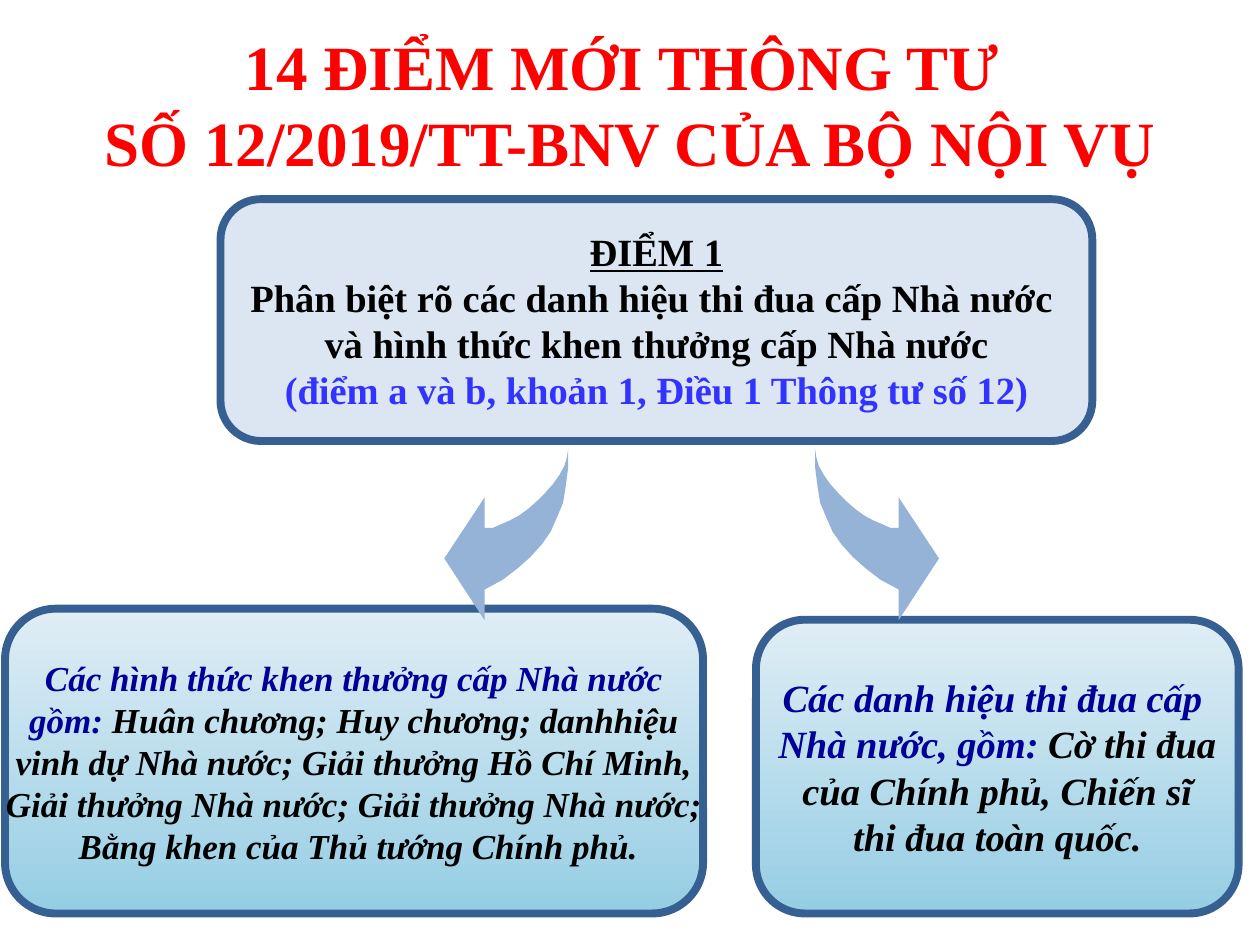
from pptx import Presentation
from pptx.dml.color import RGBColor
from pptx.enum.shapes import MSO_SHAPE
from pptx.enum.text import MSO_ANCHOR, MSO_AUTO_SIZE, PP_ALIGN
from pptx.util import Pt

THEME = {
    "font": "Times New Roman",
    "red": "FF0000", "black": "000000", "blue": "3333FF", "navy": "000099",
    "pale": "DCE6F2", "edge": "376092", "arrow": "95B3D7",
    "fade": ("95CDE4", "E0EEF5"),
    "head": 36, "body": 22, "small": 20, "line": 4.5,
}

TITLE = [[("14 ĐIỂM MỚI THÔNG TƯ \nSỐ 12/2019/TT-BNV CỦA BỘ NỘI VỤ", "red", "b")]]

BOXES = [
    {"at": (126, 113.8, 498.2, 138.2), "size": "body", "fill": "pale", "text": [
        [("ĐIỂM 1", "black", "bu")],
        [("Phân biệt rõ các danh hiệu thi đua cấp Nhà nước \n"
          "và hình thức khen thưởng cấp Nhà nước\n", "black", "b"),
         (" (điểm a và b, khoản 1, Điều 1 Thông tư số 12) ", "blue", "b")],
    ]},
    {"at": (2.9, 347.8, 398.9, 174.2), "size": "small", "fill": "fade", "text": [
        [("Các hình thức khen thưởng cấp Nhà nước", "navy", "bi")],
        [("gồm: ", "navy", "bi"),
         ("Huân chương; Huy chương; danhhiệu\n"
          " vinh dự Nhà nước; Giải thưởng Hồ Chí Minh, ", "black", "bi")],
        [("Giải thưởng Nhà nước; Giải thưởng Nhà nước;\n"
          " Bằng khen của Thủ tướng Chính phủ.", "black", "bi")],
    ]},
    {"at": (432, 354.2, 275.8, 167.8), "size": "body", "fill": "fade", "text": [
        [("Các danh hiệu thi đua cấp \nNhà nước, gồm: ", "navy", "bi"),
         ("Cờ thi đua\n của Chính phủ, Chiến sĩ \nthi đua toàn quốc.", "black", "bi")],
    ]},
]

ARROWS = [(465.8, 1), (324.7, -1)]
TOP = 256.3
CURVE = [
    (0, 0), (0, 10.8), (1.4, 21.6), (2.9, 31), (6.5, 39.6), (10, 47.5),
    (15, 54.7), (21.6, 62), (28.8, 68.4), (37.4, 75), (47.8, 80.6),
    (47.8, 98), (70.8, 62.8), (47.8, 28), (47.8, 45.4), (43.2, 45.4),
    (38.2, 43.2), (33.1, 41), (28, 38.2), (23, 34.6), (18, 30.2),
    (13, 25.2), (8.6, 20.2), (5, 15.1), (2.2, 10), (0.7, 5),
]


def color(name):
    return RGBColor.from_string(THEME.get(name, name))


def write(frame, paras, size):
    for i, runs in enumerate(paras):
        para = frame.paragraphs[0] if i == 0 else frame.add_paragraph()
        para.alignment = PP_ALIGN.CENTER
        for text, tone, style in runs:
            for j, line in enumerate(text.split("\n")):
                if j:
                    para.add_line_break()
                if not line:
                    continue
                run = para.add_run()
                run.text = line
                font = run.font
                font.name, font.size = THEME["font"], Pt(THEME[size])
                font.color.rgb = color(tone)
                font.bold = "b" in style
                font.italic = "i" in style
                font.underline = "u" in style


def place(shape, at):
    shape.left, shape.top, shape.width, shape.height = map(Pt, at)


def add_box(slide, box):
    shape = slide.shapes.add_shape(MSO_SHAPE.ROUNDED_RECTANGLE, *map(Pt, box["at"]))
    shape.shadow.inherit = False
    if box["fill"] == "fade":
        shape.fill.gradient()
        shape.fill.gradient_angle = 90
        for stop, tone in zip(shape.fill.gradient_stops, THEME["fade"]):
            stop.color.rgb = color(tone)
    else:
        shape.fill.solid()
        shape.fill.fore_color.rgb = color(box["fill"])
    shape.line.color.rgb = color("edge")
    shape.line.width = Pt(THEME["line"])
    frame = shape.text_frame
    frame.word_wrap = False
    frame.vertical_anchor = MSO_ANCHOR.MIDDLE
    write(frame, box["text"], box["size"])


def add_arrow(slide, left, side):
    first, *rest = [(Pt(left + side * x), Pt(TOP + y)) for x, y in CURVE]
    pen = slide.shapes.build_freeform(*first)
    pen.add_line_segments(rest, close=True)
    shape = pen.convert_to_shape()
    shape.shadow.inherit = False
    shape.fill.solid()
    shape.fill.fore_color.rgb = color("arrow")
    shape.line.fill.background()


def main():
    deck = Presentation()
    deck.slide_width, deck.slide_height = Pt(720), Pt(540)
    slide = deck.slides.add_slide(deck.slide_layouts[5])
    title = slide.shapes.title
    place(title, (0, 0, 720, 102.2))
    frame = title.text_frame
    frame.margin_left = frame.margin_right = frame.margin_top = frame.margin_bottom = 0
    frame.word_wrap = True
    frame.auto_size = MSO_AUTO_SIZE.SHAPE_TO_FIT_TEXT
    frame.vertical_anchor = MSO_ANCHOR.BOTTOM
    write(frame, TITLE, "head")
    for box in BOXES:
        add_box(slide, box)
    for left, side in ARROWS:
        add_arrow(slide, left, side)
    deck.save("out.pptx")


if __name__ == "__main__":
    main()
